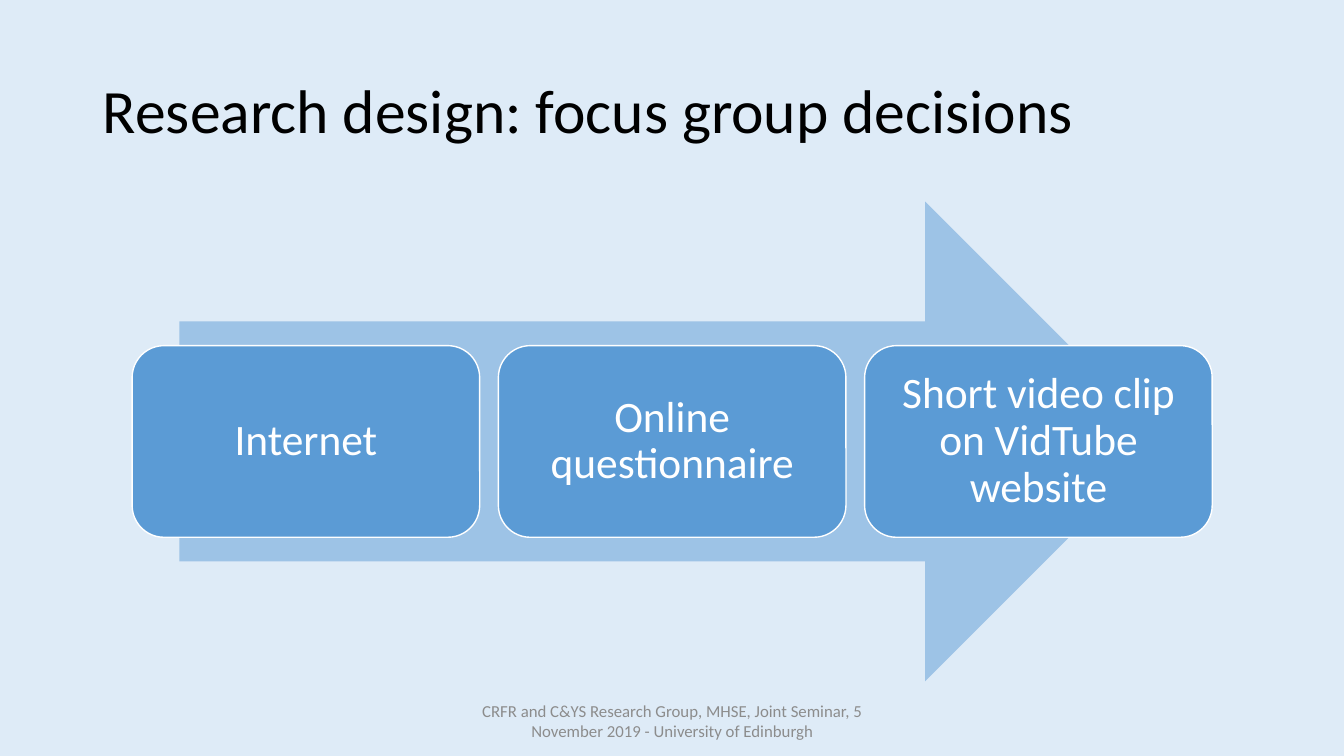
"""Build the slide on focus group decisions: three steps laid along an arrow."""
from pptx import Presentation
from pptx.dml.color import RGBColor
from pptx.enum.shapes import MSO_SHAPE
from pptx.enum.text import MSO_ANCHOR, MSO_AUTO_SIZE, PP_ALIGN
from pptx.util import Cm, Pt

TITLE = "Research design: focus group decisions"
STEPS = ["Internet", "Online questionnaire", "Short video clip on VidTube website"]
FOOTER = ("CRFR and C&YS Research Group, MHSE, Joint Seminar, 5 November 2019"
          " - University of Edinburgh")

COLOURS = {"background": "DEEBF7", "arrow": "9DC3E6", "step": "5B9BD5",
           "outline": "FFFFFF", "step text": "FFFFFF", "title": "000000",
           "footer": "8C8C8C"}
FONT = "Calibri"

TITLE_BOX = (2.34, 1.02, 29.21, 3.68)
FOOTER_BOX = (11.23, 17.65, 11.43, 1.02)
ARROW_BOX = (4.52, 5.08, 24.84, 12.09)
STEP_LEFT, STEP_WIDTH, STEP_HEIGHT, STEP_GAP = 3.33, 8.76, 4.83, 0.47
STEP_INSET = 0.33


def colour(role):
    return RGBColor.from_string(COLOURS[role])


def write(frame, wording, size, role, align, spacing=1.0):
    frame_format = {"word_wrap": True, "auto_size": MSO_AUTO_SIZE.NONE,
                    "vertical_anchor": MSO_ANCHOR.MIDDLE}
    for name, value in frame_format.items():
        setattr(frame, name, value)
    paragraph = frame.paragraphs[0]
    paragraph.alignment, paragraph.line_spacing = align, spacing
    run = paragraph.add_run()
    run.text = wording
    for name, value in {"name": FONT, "size": Pt(size)}.items():
        setattr(run.font, name, value)
    run.font.color.rgb = colour(role)


def add_filled(slide, kind, box, role):
    filled = slide.shapes.add_shape(kind, *map(Cm, box))
    filled.shadow.inherit = False
    filled.fill.solid()
    filled.fill.fore_color.rgb = colour(role)
    filled.line.fill.background()
    return filled


def add_step(slide, position, wording):
    left = STEP_LEFT + position * (STEP_WIDTH + STEP_GAP)
    top = ARROW_BOX[1] + (ARROW_BOX[3] - STEP_HEIGHT) / 2
    step = add_filled(slide, MSO_SHAPE.ROUNDED_RECTANGLE,
                      (left, top, STEP_WIDTH, STEP_HEIGHT), "step")
    step.line.color.rgb = colour("outline")
    step.line.width = Pt(1)
    for side in ("left", "top", "right", "bottom"):
        setattr(step.text_frame, f"margin_{side}", Cm(STEP_INSET))
    write(step.text_frame, wording, 31, "step text", PP_ALIGN.CENTER, 0.9)


def main():
    deck = Presentation()
    deck.slide_width, deck.slide_height = Cm(33.87), Cm(19.05)
    slide = deck.slides.add_slide(deck.slide_layouts[5])
    slide.background.fill.solid()
    slide.background.fill.fore_color.rgb = colour("background")

    title = slide.shapes.title
    for name, value in zip(("left", "top", "width", "height"), TITLE_BOX):
        setattr(title, name, Cm(value))
    write(title.text_frame, TITLE, 44, "title", PP_ALIGN.LEFT, 0.9)

    footer = slide.shapes.add_textbox(*map(Cm, FOOTER_BOX))
    write(footer.text_frame, FOOTER, 12, "footer", PP_ALIGN.CENTER)

    add_filled(slide, MSO_SHAPE.RIGHT_ARROW, ARROW_BOX, "arrow")
    for position, wording in enumerate(STEPS):
        add_step(slide, position, wording)

    deck.save("out.pptx")


if __name__ == "__main__":
    main()
